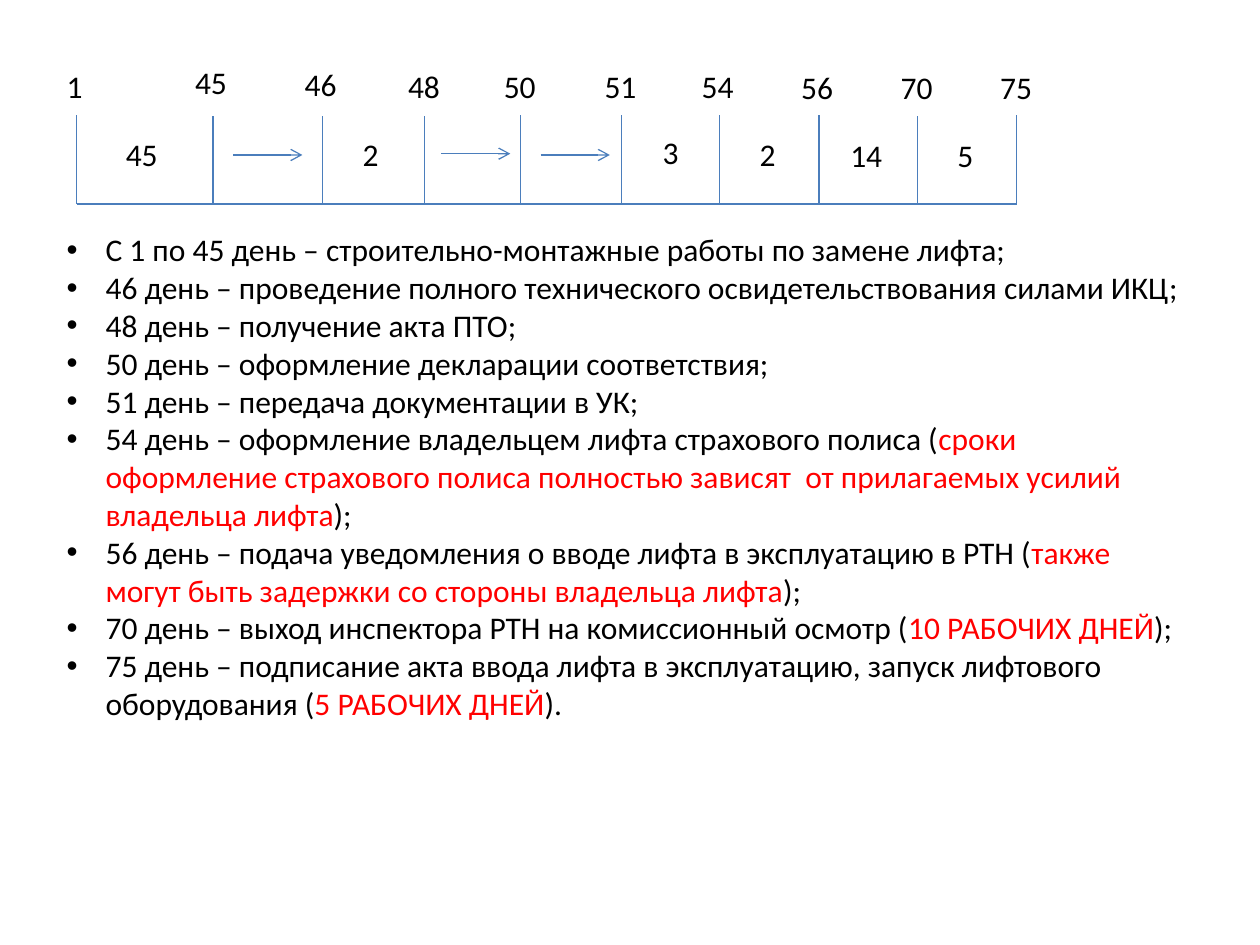
from typing import NamedTuple

import pptx
import pptx.dml.color
import pptx.enum.shapes
import pptx.enum.text
import pptx.oxml
import pptx.oxml.ns
import pptx.util
from pptx.util import Inches

BLUE, BLACK, RED = "4B7EBC", "000000", "FF0000"
BASE = 1.62


class Day(NamedTuple):
    name: str
    x: float
    top: float
    left: float
    label: float
    width: float = 0.47


class Span(NamedTuple):
    name: str
    left: float
    top: float
    width: float


class Arrow(NamedTuple):
    left: float
    y: float


class Item(NamedTuple):
    text: str
    note: str = ""
    end: str = ""


DAYS = [
    Day("1", 0.61, 0.91, 0.43, 0.48, 0.31),
    Day("45", 1.69, 0.92, 1.45, 0.45),
    Day("46", 2.56, 0.92, 2.32, 0.47),
    Day("48", 3.37, 0.92, 3.14, 0.48),
    Day("50", 4.13, 0.91, 3.9, 0.48),
    Day("51", 4.93, 0.91, 4.7, 0.48),
    Day("54", 5.71, 0.91, 5.47, 0.48),
    Day("56", 6.5, 0.91, 6.26, 0.49),
    Day("70", 7.28, 0.92, 7.05, 0.49),
    Day("75", 8.07, 0.91, 7.84, 0.49),
]
SPANS = [
    Span("45", 0.9, 1.02, 0.71),
    Span("2", 2.78, 1.02, 0.49),
    Span("3", 5.16, 1.01, 0.51),
    Span("2", 5.93, 1.02, 0.43),
    Span("14", 6.65, 1.03, 0.57),
    Span("5", 7.5, 1.03, 0.49),
]
ARROWS = [Arrow(1.85, 1.23), Arrow(3.5, 1.22), Arrow(4.29, 1.23)]
ITEMS = [
    Item("С 1 по 45 день – строительно-монтажные работы по замене лифта;"),
    Item("46 день – проведение полного технического освидетельствования силами ИКЦ;"),
    Item("48 день – получение акта ПТО;"),
    Item("50 день – оформление декларации соответствия;"),
    Item("51 день – передача документации в УК;"),
    Item("54 день – оформление владельцем лифта страхового полиса (",
         "сроки оформление страхового полиса полностью зависят  от "
         "прилагаемых усилий владельца лифта", ");"),
    Item("56 день – подача уведомления о вводе лифта в эксплуатацию в РТН (",
         "также могут быть задержки со стороны владельца лифта", ");"),
    Item("70 день – выход инспектора РТН на комиссионный осмотр (",
         "10 РАБОЧИХ ДНЕЙ", ");"),
    Item("75 день – подписание акта ввода лифта в эксплуатацию, запуск "
         "лифтового оборудования (", "5 РАБОЧИХ ДНЕЙ", ")."),
]


def paint(target, color: str) -> None:
    """Set the colour of a font or a line fill."""
    target.fill.solid()
    target.fill.fore_color.rgb = pptx.dml.color.RGBColor.from_string(color)


def add_line(slide, x1: float, y1: float, x2: float, y2: float,
             arrow: bool = False) -> None:
    line = slide.shapes.add_connector(
        pptx.enum.shapes.MSO_CONNECTOR.STRAIGHT,
        Inches(x1), Inches(y1), Inches(x2), Inches(y2))
    paint(line.line, BLUE)
    line.line.width = pptx.util.Pt(0.75)
    if arrow:
        tail = pptx.oxml.parse_xml(
            f'<a:tailEnd {pptx.oxml.ns.nsdecls("a")} type="arrow"/>')
        line.line._get_or_add_ln().append(tail)
    props = line._element.spPr
    props.append(pptx.oxml.parse_xml(
        f'<a:effectLst {pptx.oxml.ns.nsdecls("a")}/>'))


def add_frame(slide, left: float, top: float, width: float, height: float):
    frame = slide.shapes.add_textbox(
        Inches(left), Inches(top), Inches(width), Inches(height)).text_frame
    frame.word_wrap = True
    frame.auto_size = pptx.enum.text.MSO_AUTO_SIZE.SHAPE_TO_FIT_TEXT
    return frame


def set_font(para) -> None:
    para.font.name = "Calibri"
    para.font.size = pptx.util.Pt(18)
    paint(para.font, BLACK)


def add_label(slide, text: str, left: float, top: float, width: float) -> None:
    para = add_frame(slide, left, top, width, 0.4).paragraphs[0]
    para.text = text
    set_font(para)


def add_list(slide, items: list[Item]) -> None:
    frame = add_frame(slide, 0.43, 1.78, 9.06, 5.55)
    for i, item in enumerate(items):
        para = frame.add_paragraph() if i else frame.paragraphs[0]
        props = para._p.get_or_add_pPr()
        props.set("marL", str(Inches(0.31)))
        props.set("indent", str(Inches(-0.31)))
        for tag in ('buFont {} typeface="Arial"', 'buChar {} char="•"'):
            body = tag.format(pptx.oxml.ns.nsdecls("a"))
            props.append(pptx.oxml.parse_xml(f"<a:{body}/>"))
        set_font(para)
        for text, color in zip(item, (BLACK, RED, BLACK)):
            if text:
                run = para.add_run()
                run.text = text
                paint(run.font, color)


def main() -> None:
    deck = pptx.Presentation()
    deck.slide_width, deck.slide_height = Inches(10), Inches(7.5)
    slide = deck.slides.add_slide(deck.slide_layouts[6])

    add_line(slide, DAYS[0].x, BASE, DAYS[-1].x, BASE)
    for day in DAYS:
        add_line(slide, day.x, BASE, day.x, day.top)
        add_label(slide, day.name, day.left, day.label, day.width)
    for span in SPANS:
        add_label(slide, span.name, span.left, span.top, span.width)
    for arrow in ARROWS:
        add_line(slide, arrow.left, arrow.y, arrow.left + 0.55, arrow.y, True)
    add_list(slide, ITEMS)
    deck.save("out.pptx")


if __name__ == "__main__":
    main()
